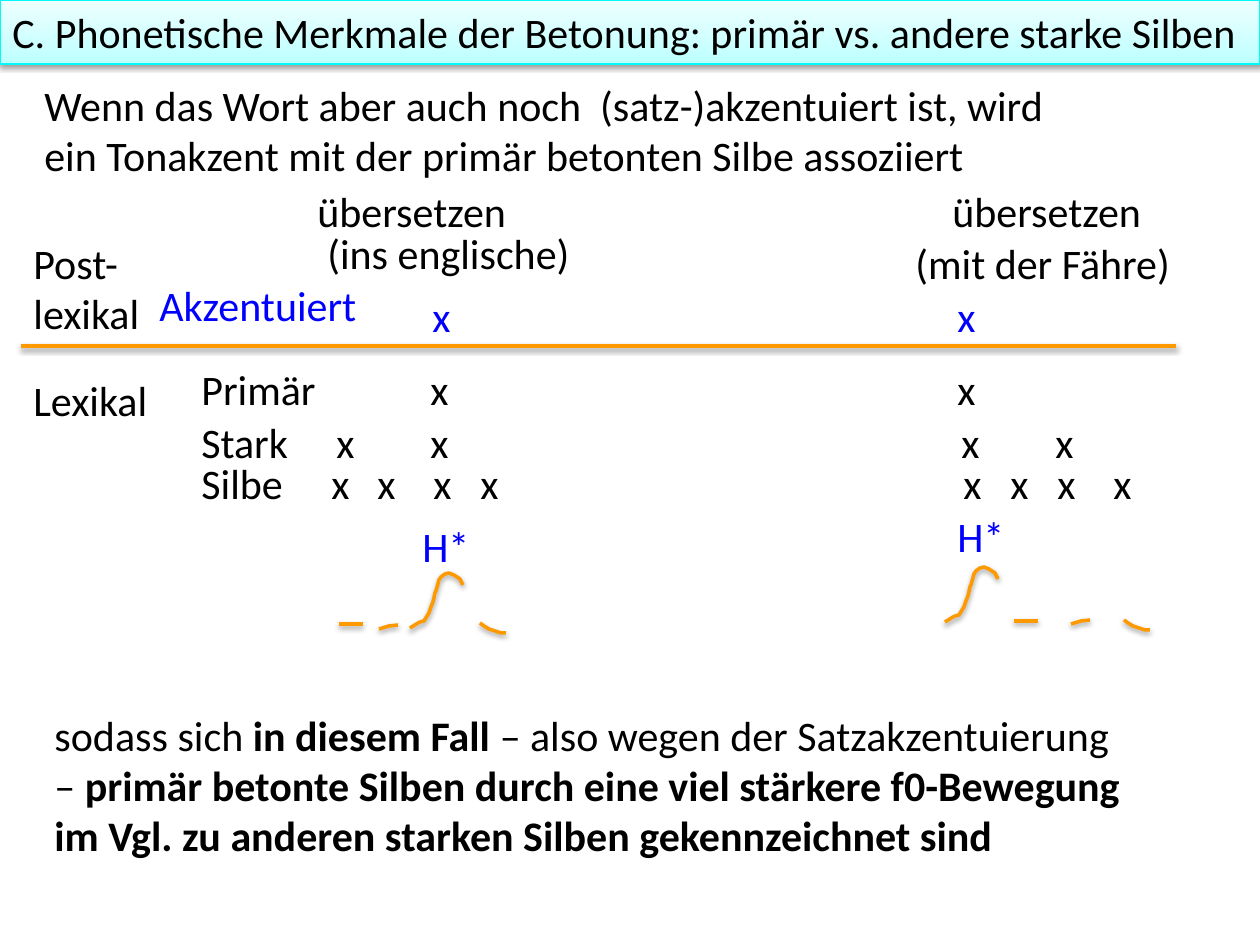
from lxml import etree
from pptx import Presentation
from pptx import util as u
from pptx.dml.color import RGBColor
from pptx.enum import shapes, text
from pptx.oxml import ns

SCALE = 914400 / 126
INSET = 12
BLACK = RGBColor(0x00, 0x00, 0x00)
BLUE = RGBColor(0x00, 0x00, 0xFF)
ORANGE = RGBColor(0xFF, 0x99, 0x00)
CYAN = RGBColor(0x00, 0xF9, 0xF9)
CYAN_MID = RGBColor(0xBD, 0xFF, 0xFF)
CYAN_PALE = RGBColor(0xEE, 0xFF, 0xFF)

RISE = [(0, 55), (8, 50), (10, 49), (14, 48), (19, 40), (21, 34), (23, 29), (24, 25), (25, 20),
        (26, 18), (28, 11), (29, 7), (31, 4), (35, 1), (39, 0), (44, 2), (47, 4), (50, 6), (53, 12)]
SLOPE = [(0, 4), (10, 1), (19, 0)]
FALL = [(0, 0), (4, 3), (9, 6), (15, 8), (21, 10), (26, 10)]
FLAT = [(0, 0), (24, 0)]


def px(n):
    """Turn pixels into EMU."""
    return u.Emu(round(n * SCALE))


def add_shadow(sp):
    """Give a shape or connector a soft shadow below it."""
    effects = etree.SubElement(sp._element.spPr, ns.qn("a:effectLst"))
    outer = etree.SubElement(effects, ns.qn("a:outerShdw"), blurRad="40000", dist="20000",
                             dir="5400000", rotWithShape="0")
    color = etree.SubElement(outer, ns.qn("a:srgbClr"), val="000000")
    etree.SubElement(color, ns.qn("a:alpha"), val="38000")


def set_font(p, color=BLACK):
    """Apply the slide's common font to a paragraph."""
    p.font.name, p.font.size, p.font.color.rgb = "Calibri", u.Pt(24), color


def add_text(s, box, runs, color=BLACK, stops=()):
    """Place a text box of (wording, bold) runs with optional tab stops."""
    sp = s.shapes.add_textbox(*map(px, box))
    tf = sp.text_frame
    tf.word_wrap = True
    tf.auto_size = text.MSO_AUTO_SIZE.SHAPE_TO_FIT_TEXT
    p = tf.paragraphs[0]
    if stops:
        tabs = etree.SubElement(p._p.get_or_add_pPr(), ns.qn("a:tabLst"))
        for stop in stops:
            etree.SubElement(tabs, ns.qn("a:tab"), pos=str(px(stop)), algn="l")
    for wording, bold in runs:
        r = p.add_run()
        r.text = wording
        if bold:
            r.font.bold = True
    set_font(p, color)


def add_title(s, box, wording):
    """Draw the shaded title bar."""
    sp = s.shapes.add_shape(shapes.MSO_SHAPE.RECTANGLE, *map(px, box))
    sp.fill.gradient()
    sp.fill.gradient_angle = 90
    for stop, color in zip(sp.fill.gradient_stops, (CYAN_MID, CYAN_PALE)):
        stop.color.rgb = color
    sp.line.color.rgb, sp.line.width = CYAN, u.Pt(0.75)
    add_shadow(sp)
    tf = sp.text_frame
    tf.word_wrap = True
    tf.vertical_anchor = text.MSO_ANCHOR.MIDDLE
    p = tf.paragraphs[0]
    p.text, p.alignment = wording, text.PP_ALIGN.LEFT
    set_font(p)


def add_stroke(s, x, y, points):
    """Draw an orange stroke through points relative to (x, y)."""
    spots = [(x + dx, y + dy) for dx, dy in points]
    if len(spots) == 2:
        (x1, y1), (x2, y2) = spots
        sp = s.shapes.add_connector(shapes.MSO_CONNECTOR.STRAIGHT, px(x1), px(y1), px(x2), px(y2))
    else:
        fb = s.shapes.build_freeform(*spots[0], scale=SCALE)
        fb.add_line_segments(spots[1:], close=False)
        sp = fb.convert_to_shape()
        sp.fill.background()
    sp.line.color.rgb, sp.line.width = ORANGE, u.Pt(2)
    add_shadow(sp)


def add_grid(s, x, y):
    """Place the metrical grid rows, with marks aligned by tab stops."""
    rows = [
        (116, -178, "übersetzen", "übersetzen", [635]),
        (0, 0, "Primär", "x", [229, 756]),
        (0, 53, "Stark", "x", [135, 229, 760, 854]),
        (0, 94, "Silbe", "x", [130, 176, 232, 279, 762, 809, 856, 912]),
    ]
    for dx, dy, label, mark, stops in rows:
        wording = "\t".join([label] + [mark] * len(stops))
        add_text(s, (x + dx, y + dy, 1010 - dx, 64), [(wording, False)], stops=stops)


def add_accent(s, x, y, tone_x, tone_y):
    """Place the accent mark and its H* tone."""
    add_text(s, (x, y, 63, 64), [("x", False)], BLUE)
    add_text(s, (tone_x, tone_y, 73, 64), [("H*", False)], BLUE)


def add_contour(s, x, y, strokes):
    """Draw a pitch contour from strokes relative to (x, y)."""
    for dx, dy, points in strokes:
        add_stroke(s, x + dx, y + dy, points)


def main():
    """Build the slide and save it."""
    prs = Presentation()
    prs.slide_width, prs.slide_height = px(1260), px(945)
    s = prs.slides.add_slide(prs.slide_layouts[6])
    add_stroke(s, 21, 346, [(0, 0), (1155, 0)])
    labels = [
        ((21, 368, 147, 64), "Lexikal", BLACK),
        ((21, 231, 158, 116), "Post-lexikal", BLACK),
        ((32, 73, 1061, 115), "Wenn das Wort aber auch noch  (satz-)akzentuiert ist, wird "
         "ein Tonakzent mit der primär betonten Silbe assoziiert", BLACK),
        ((315, 221, 284, 64), "(ins englische)", BLACK),
        ((903, 231, 284, 64), "(mit der Fähre)", BLACK),
        ((147, 273, 231, 64), "Akzentuiert", BLUE),
    ]
    for box, wording, color in labels:
        add_text(s, box, [(wording, False)], color)
    add_text(s, (42, 703, 1103, 165), [
        ("sodass sich ", False),
        ("in diesem Fall ", True),
        ("– also wegen der Satzakzentuierung – ", False),
        ("primär betonte Silben durch eine viel stärkere f0-Bewegung "
         "im Vgl. zu anderen starken Silben gekennzeichnet sind", True),
    ])
    add_title(s, (0, 0, 1260, 64), "C. Phonetische Merkmale der Betonung: primär vs. andere starke Silben")
    add_grid(s, 189, 357)
    add_accent(s, 420, 284, 410, 514)
    add_accent(s, 945, 284, 945, 504)
    add_contour(s, 339, 573, [(0, 51, FLAT), (40, 52, SLOPE), (71, 0, RISE), (141, 50, FALL)])
    add_contour(s, 945, 567, [(0, 0, RISE), (69, 54, FLAT), (126, 53, SLOPE), (179, 53, FALL)])
    prs.save("out.pptx")


if __name__ == "__main__":
    main()
